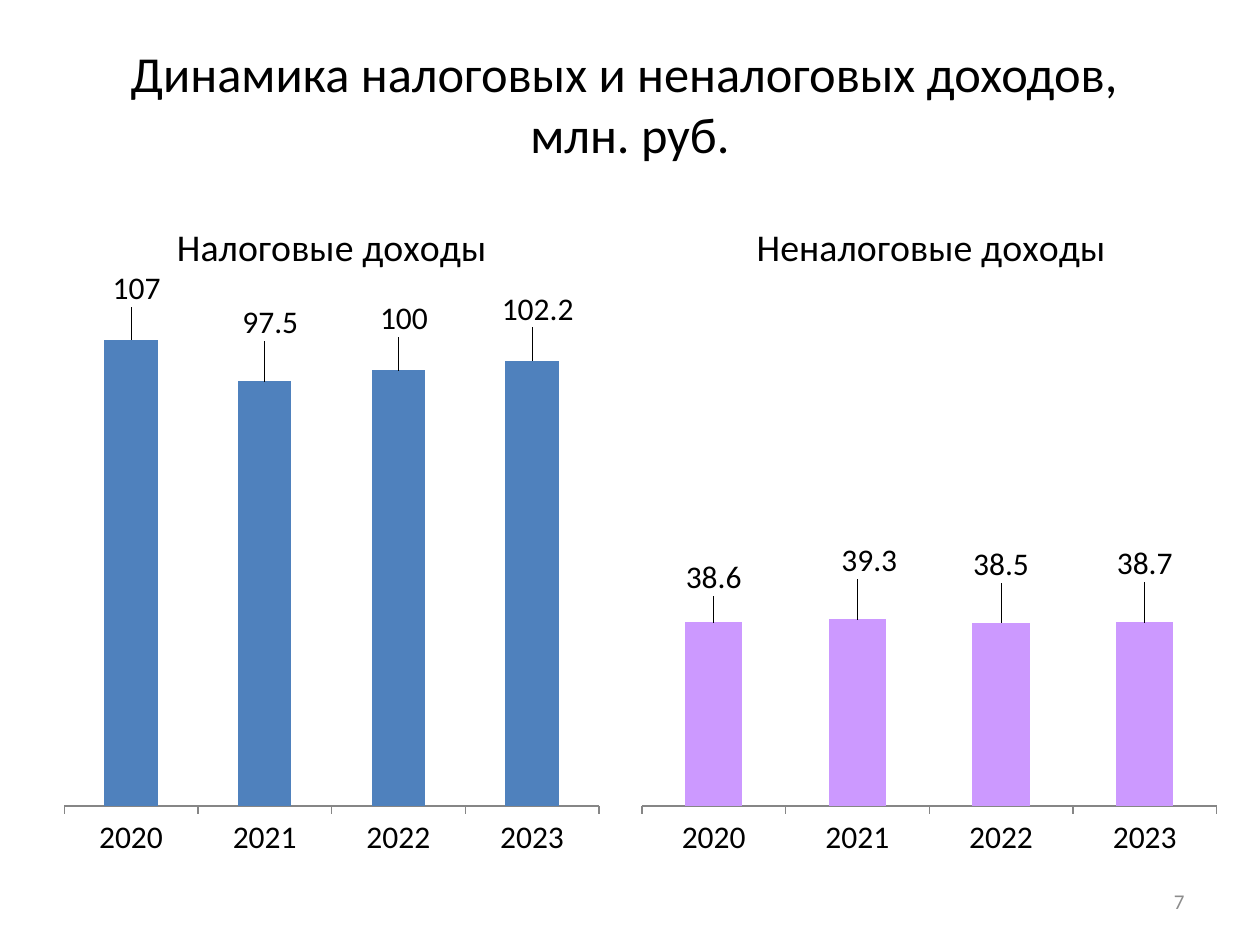
from dataclasses import dataclass

from lxml.etree import SubElement
from pptx import Presentation
from pptx.chart.data import CategoryChartData
from pptx.dml.color import RGBColor
from pptx.enum.chart import XL_CHART_TYPE as ChartType
from pptx.enum.chart import XL_LABEL_POSITION as LabelPosition
from pptx.enum.chart import XL_TICK_MARK as TickMark
from pptx.enum.text import MSO_ANCHOR as Anchor
from pptx.enum.text import PP_ALIGN as Align
from pptx.oxml.ns import qn
from pptx.util import Cm, Pt

FONT = "Calibri"
BLACK = "000000"
YEARS = ("2020", "2021", "2022", "2023")
CHART_TOP, CHART_HEIGHT = 3.61, 13.97


@dataclass
class IncomeChart:
    title: str
    left: float
    width: float
    title_x: float
    values: tuple[float, ...]
    axis_max: float
    color: str
    label_shifts: tuple[tuple[float, float], ...]


INCOME_CHARTS = (
    IncomeChart("Налоговые доходы", 1.07, 11.23, 0.21, (107, 97.5, 100, 102.2), 120,
                "4F81BD", ((0.01, -0.04), (0.01, -0.05), (0.01, -0.04), (0.01, -0.04))),
    IncomeChart("Неналоговые доходы", 12.7, 12.07, 0.2, (38.6, 39.3, 38.5, 38.7), 110,
                "CC99FF", ((0, -0.03), (0.02, -0.05), (0, -0.05), (0, -0.05))),
)


def rgb(color: str) -> RGBColor:
    return RGBColor.from_string(color)


def set_font(font, size: float, color: str = BLACK) -> None:
    font.name = FONT
    font.size = Pt(size)
    font.bold = False
    font.color.rgb = rgb(color)


def set_layout(parent, position: int, **settings) -> None:
    for old_layout in parent.findall(qn("c:layout")):
        parent.remove(old_layout)
    layout = SubElement(parent, qn("c:layout"))
    manual = SubElement(layout, qn("c:manualLayout"))
    for tag, value in settings.items():
        SubElement(manual, qn(f"c:{tag}")).set("val", str(value))
    parent.insert(position, layout)


def add_income_chart(slide, income: IncomeChart) -> None:
    data = CategoryChartData()
    data.categories = YEARS
    data.add_series("Series 1", income.values)
    chart = slide.shapes.add_chart(
        ChartType.COLUMN_CLUSTERED, Cm(income.left), Cm(CHART_TOP),
        Cm(income.width), Cm(CHART_HEIGHT), data).chart
    set_font(chart.font, 18)
    chart.has_legend = False

    chart.has_title = True
    heading = chart.chart_title.text_frame
    heading.text = income.title
    set_font(heading.paragraphs[0].font, 21.6)

    years_axis = chart.category_axis
    years_axis.major_tick_mark = TickMark.OUTSIDE
    years_axis.format.line.color.rgb = rgb("868686")
    amounts_axis = chart.value_axis
    amounts_axis.minimum_scale = 0
    amounts_axis.maximum_scale = income.axis_max
    amounts_axis.has_major_gridlines = False
    amounts_axis.visible = False

    plot = chart.plots[0]
    plot.gap_width = 150
    plot.vary_by_categories = False
    series = plot.series[0]
    series.format.fill.solid()
    series.format.fill.fore_color.rgb = rgb(income.color)
    series.data_labels.show_value = True
    series.data_labels.position = LabelPosition.OUTSIDE_END
    for index in range(len(YEARS)):
        series.points[index].data_label.position = LabelPosition.OUTSIDE_END

    chart_xml = chart.element
    for label, (x, y) in zip(chart_xml.iter(qn("c:dLbl")), income.label_shifts):
        set_layout(label, 1, x=x, y=y)
    set_layout(next(chart_xml.iter(qn("c:title"))), 1,
               xMode="edge", yMode="edge", x=income.title_x, y=0.05)
    set_layout(next(chart_xml.iter(qn("c:plotArea"))), 0,
               layoutTarget="inner", xMode="edge", yMode="edge",
               x=0.02, y=0.15, w=0.96, h=0.755)


def add_title(slide, text: str) -> None:
    title = slide.shapes.title
    title.left, title.top, title.width, title.height = Cm(1.27), Cm(0.76), Cm(22.86), Cm(2.62)
    title.text_frame.text = text
    title.text_frame.vertical_anchor = Anchor.MIDDLE
    paragraph = title.text_frame.paragraphs[0]
    paragraph.alignment = Align.CENTER
    set_font(paragraph.font, 28.8)


def add_page_number(slide, number: str) -> None:
    frame = slide.shapes.add_textbox(Cm(18.2), Cm(17.65), Cm(5.93), Cm(1.02)).text_frame
    frame.word_wrap = True
    frame.vertical_anchor = Anchor.MIDDLE
    frame.text = number
    paragraph = frame.paragraphs[0]
    paragraph.alignment = Align.RIGHT
    set_font(paragraph.font, 12, "8C8C8C")


def main() -> None:
    presentation = Presentation()
    presentation.slide_width, presentation.slide_height = Cm(25.4), Cm(19.05)
    slide = presentation.slides.add_slide(presentation.slide_layouts[5])
    add_title(slide, "Динамика налоговых и неналоговых доходов, \vмлн. руб.")
    for income in INCOME_CHARTS:
        add_income_chart(slide, income)
    add_page_number(slide, "7")
    presentation.save("out.pptx")


if __name__ == "__main__":
    main()
